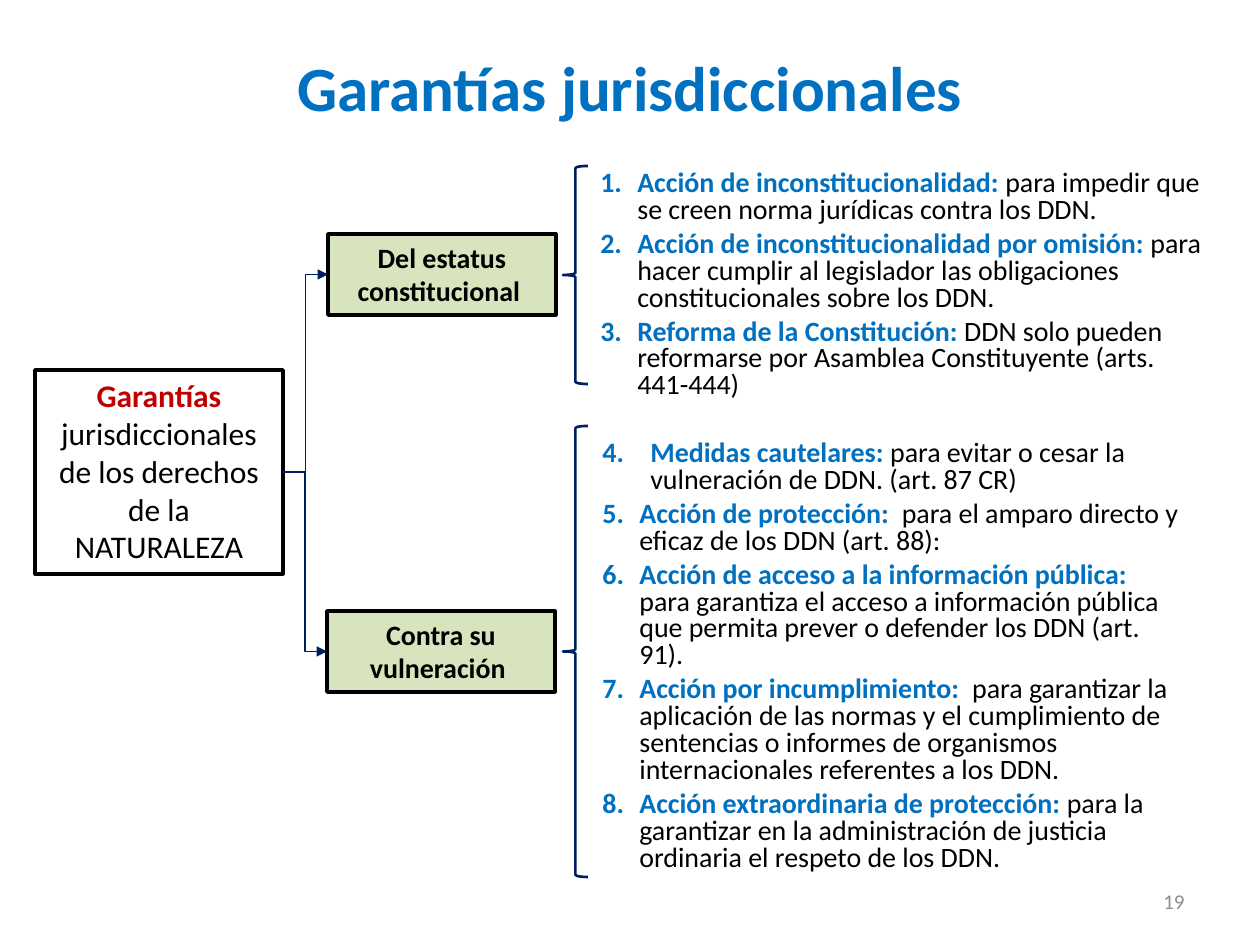
from dataclasses import dataclass
from typing import NamedTuple

from lxml.etree import SubElement
from pptx import Presentation
from pptx.dml.color import RGBColor
from pptx.enum.shapes import MSO_CONNECTOR, MSO_SHAPE
from pptx.enum.text import MSO_ANCHOR, PP_ALIGN
from pptx.oxml.ns import qn
from pptx.util import Emu, Pt


@dataclass(frozen=True)
class Theme:
    font: str = "Calibri"
    blue: str = "0070C0"
    navy: str = "001F5E"
    red: str = "C00000"
    black: str = "000000"
    white: str = "FFFFFF"
    green: str = "D7E4BD"
    gray: str = "8C8C8C"
    title_size: int = 36
    root_size: int = 18
    body_size: int = 16
    number_size: int = 12


class Area(NamedTuple):
    left: int
    top: int
    width: int
    height: int


class Action(NamedTuple):
    name: str
    detail: str
    indent: int = 37


@dataclass(frozen=True)
class Branch:
    label: str
    box: Area
    brace: Area
    listing: Area
    start: int
    actions: tuple[Action, ...]


THEME = Theme()
PIXELS_PER_INCH = 126
LEFT_SITE, RIGHT_SITE = 1, 3

ROOT = Area(35, 370, 248, 204)
BRANCHES = (
    Branch(
        "Del estatus constitucional ",
        Area(328, 234, 228, 81), Area(563, 166, 25, 218), Area(588, 165, 627, 244), 1,
        (
            Action("Acción de inconstitucionalidad: ",
                   "para impedir que se creen norma jurídicas contra los DDN."),
            Action("Acción de inconstitucionalidad por omisión: ",
                   "para hacer cumplir al legislador las obligaciones "
                   "constitucionales sobre los DDN."),
            Action("Reforma de la Constitución:",
                   " DDN solo pueden reformarse por Asamblea Constituyente (arts. 441-444)"),
        ),
    ),
    Branch(
        "Contra su vulneración ",
        Area(327, 611, 228, 81), Area(563, 426, 25, 451), Area(590, 435, 605, 442), 4,
        (
            Action("Medidas cautelares: ",
                   "para evitar o cesar la vulneración de DDN. (art. 87 CR)", 48),
            Action("Acción de protección:  ",
                   "para el amparo directo y eficaz de los DDN (art. 88):"),
            Action("Acción de acceso a la información pública: ",
                   "para garantiza el acceso a información pública que permita prever "
                   "o defender los DDN (art. 91)."),
            Action("Acción por incumplimiento:  ",
                   "para garantizar la aplicación de las normas y el cumplimiento de "
                   "sentencias o informes de organismos internacionales referentes a los DDN."),
            Action("Acción extraordinaria de protección: ",
                   "para la garantizar en la administración de justicia ordinaria "
                   "el respeto de los DDN."),
        ),
    ),
)


def px(length: int) -> Emu:
    return Emu(round(length * 914400 / PIXELS_PER_INCH))


def place(area: Area) -> tuple[Emu, ...]:
    return tuple(px(length) for length in area)


def add_span(para, text: str, *, size: int = THEME.body_size,
             color: str = THEME.black, bold: bool = False) -> None:
    span = para.add_run()
    span.text = text
    span.font.name = THEME.font
    span.font.size = Pt(size)
    span.font.bold = bold
    span.font.color.rgb = RGBColor.from_string(color)


def draw_title(page, text: str) -> None:
    title = page.shapes.title
    title.left, title.top, title.width, title.height = place(Area(63, 38, 1134, 97))
    title.text_frame.vertical_anchor = MSO_ANCHOR.MIDDLE
    para = title.text_frame.paragraphs[0]
    para.alignment = PP_ALIGN.CENTER
    add_span(para, text, size=THEME.title_size, color=THEME.blue, bold=True)


def draw_box(page, area: Area, fill: str):
    box = page.shapes.add_shape(MSO_SHAPE.RECTANGLE, *place(area))
    box.shadow.inherit = False
    box.fill.solid()
    box.fill.fore_color.rgb = RGBColor.from_string(fill)
    box.line.color.rgb = RGBColor.from_string(THEME.black)
    box.line.width = Pt(2)
    box.text_frame.word_wrap = True
    box.text_frame.vertical_anchor = MSO_ANCHOR.TOP
    box.text_frame.paragraphs[0].alignment = PP_ALIGN.CENTER
    return box


def draw_brace(page, area: Area) -> None:
    brace = page.shapes.add_shape(MSO_SHAPE.LEFT_BRACE, *place(area))
    brace.shadow.inherit = False
    brace.fill.background()
    brace.line.color.rgb = RGBColor.from_string(THEME.navy)
    brace.line.width = Pt(1.5)


def draw_arrow(page, source, target) -> None:
    arrow = page.shapes.add_connector(MSO_CONNECTOR.ELBOW, 0, 0, 0, 0)
    arrow.begin_connect(source, RIGHT_SITE)
    arrow.end_connect(target, LEFT_SITE)
    arrow.line.color.rgb = RGBColor.from_string(THEME.navy)
    arrow.line.width = Pt(0.75)
    SubElement(arrow.line._get_or_add_ln(), qn("a:tailEnd"), type="triangle")
    SubElement(arrow._element.spPr, qn("a:effectLst"))


def draw_actions(page, branch: Branch) -> None:
    frame = page.shapes.add_textbox(*place(branch.listing)).text_frame
    frame.word_wrap = True
    for index, action in enumerate(branch.actions):
        para = frame.add_paragraph() if index else frame.paragraphs[0]
        para.line_spacing = 0.8
        para.space_after = Pt(4)
        properties = para._p.get_or_add_pPr()
        properties.set("marL", str(px(action.indent)))
        properties.set("indent", str(-px(action.indent)))
        SubElement(properties, qn("a:buFont"), typeface="+mj-lt")
        SubElement(properties, qn("a:buAutoNum"),
                   type="arabicPeriod", startAt=str(branch.start))
        add_span(para, action.name, color=THEME.blue, bold=True)
        add_span(para, action.detail)


def draw_page_number(page, number: str) -> None:
    frame = page.shapes.add_textbox(*place(Area(903, 876, 294, 50))).text_frame
    frame.word_wrap = True
    frame.vertical_anchor = MSO_ANCHOR.MIDDLE
    para = frame.paragraphs[0]
    para.alignment = PP_ALIGN.RIGHT
    add_span(para, number, size=THEME.number_size, color=THEME.gray)


def main() -> None:
    deck = Presentation()
    deck.slide_width, deck.slide_height = px(1260), px(945)
    page = deck.slides.add_slide(deck.slide_layouts.get_by_name("Title Only"))
    draw_title(page, "Garantías jurisdiccionales")
    root = draw_box(page, ROOT, THEME.white)
    para = root.text_frame.paragraphs[0]
    add_span(para, "Garantías", size=THEME.root_size, color=THEME.red, bold=True)
    add_span(para, " jurisdiccionales de los derechos de la NATURALEZA", size=THEME.root_size)
    for branch in BRANCHES:
        box = draw_box(page, branch.box, THEME.green)
        add_span(box.text_frame.paragraphs[0], branch.label, bold=True)
        draw_arrow(page, root, box)
        draw_brace(page, branch.brace)
        draw_actions(page, branch)
    draw_page_number(page, "19")
    deck.save("out.pptx")


if __name__ == "__main__":
    main()
